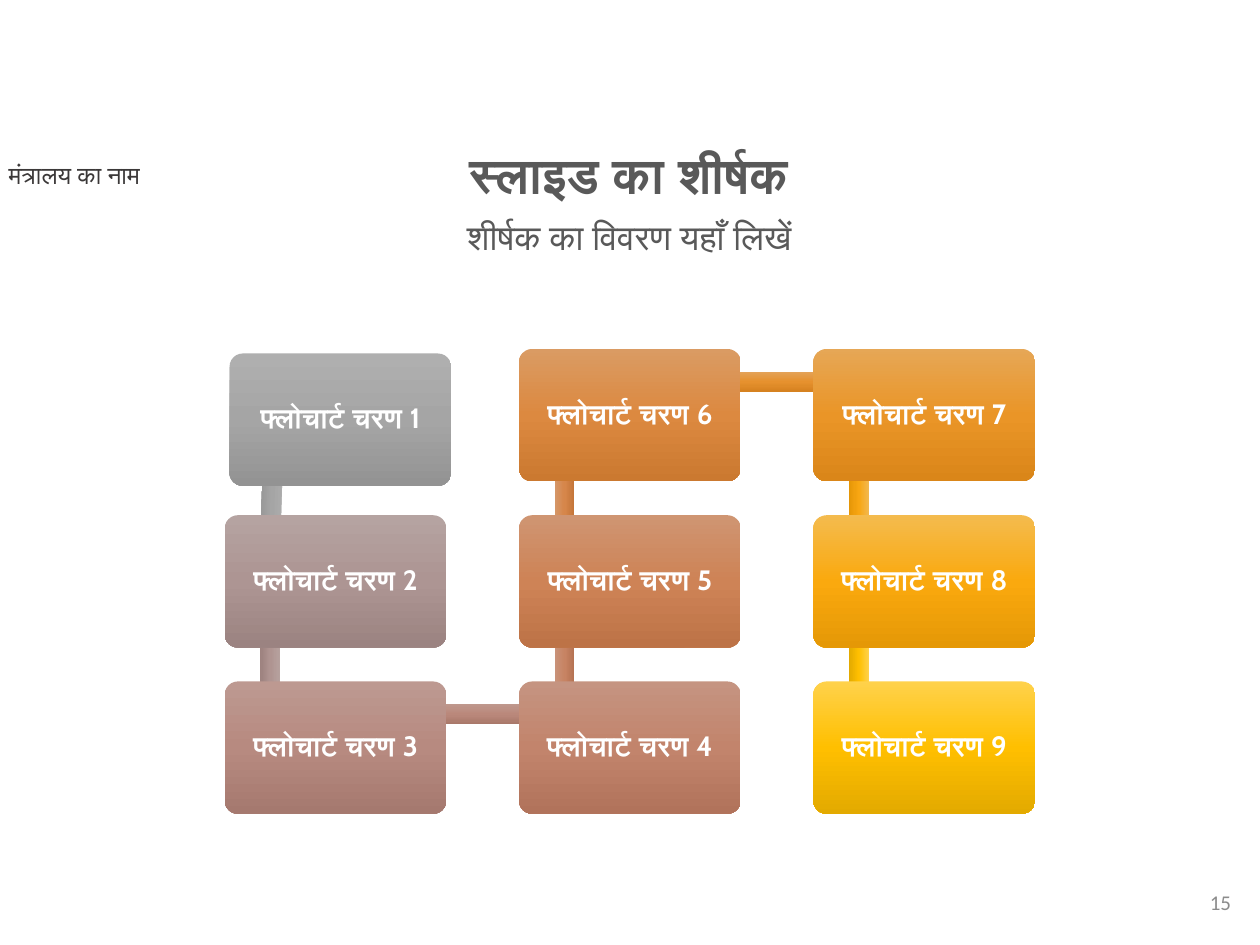
from copy import deepcopy
from math import atan2, degrees, hypot

from pptx import Presentation
from pptx.dml.color import RGBColor
from pptx.enum.shapes import MSO_SHAPE
from pptx.enum.text import MSO_ANCHOR, MSO_AUTO_SIZE, PP_ALIGN
from pptx.oxml.ns import qn
from pptx.util import Pt

COUNT, ROWS = 9, 3
BOX_W, BOX_H = 126.7, 75.6
STEP_X, STEP_Y = 168.2, 95
PIN_X, PIN_Y = 26, 18.7  # where a bar meets its box
BAR = 11.4
HUE = 45  # from grey to amber, in degrees

# Top, middle and bottom of each gradient, before the hue is turned
BOXES = [
    ("AFAFAF", "A5A5A5", "939393"), ("B5A1A1", "AD9393", "9B8181"),
    ("BD9191", "B78080", "A56F6F"), ("C58181", "C26C6C", "B15B5B"),
    ("CF7272", "CE5656", "BD4747"), ("DA6363", "DC4040", "CB3030"),
    ("E65656", "EA2727", "DA1919"), ("F44E4E", "FA0E0E", "E50606"),
    ("FF4B4B", "FF0000", "E30000"),
]
BARS = [
    ("AFAFAF", "A5A5A5", "939393"), ("B69E9E", "AF9191", "9D7F7F"),
    ("BF8D8D", "BA7B7B", "A96A6A"), ("C97B7B", "C76363", "B65353"),
    ("D56969", "D64A4A", "C53A3A"), ("E35A5A", "E62E2E", "D62020"),
    ("F24F4F", "F81212", "E50707"), ("FF4B4B", "FF0000", "E30000"),
]


def rgb(code):
    return RGBColor.from_string(code)


def turn(code, hue):
    """Turn a red of any strength towards yellow by hue degrees."""
    red, _, blue = rgb(code)
    green = round(blue + (red - blue) * hue / 60)
    return f"{red:02X}{green:02X}{blue:02X}"


def shade(shape, codes, hue):
    shape.shadow.inherit = False
    shape.line.fill.background()
    shape.fill.gradient()
    shape.fill.gradient_angle = 270
    stops = shape._element.spPr.find(".//" + qn("a:gsLst"))
    stops.append(deepcopy(stops[0]))
    for stop, code, spot in zip(shape.fill.gradient_stops, codes, (0, 0.5, 1)):
        stop.color.rgb = rgb(turn(code, hue))
        stop.position = spot


def write(frame, text, size, color, font="Calibri", bold=False,
          align=PP_ALIGN.LEFT, anchor=MSO_ANCHOR.TOP, lead=1.0):
    frame.word_wrap = True
    frame.auto_size = MSO_AUTO_SIZE.NONE
    frame.vertical_anchor = anchor
    para = frame.paragraphs[0]
    para.alignment = align
    para.line_spacing = lead
    para.space_before = Pt(0)
    run = para.add_run()
    run.text = text
    run.font.name = font
    run.font.size = Pt(size)
    run.font.bold = bold
    run.font.color.rgb = rgb(color)


def place(shape, left, top, width, height):
    shape.left, shape.top = Pt(left), Pt(top)
    shape.width, shape.height = Pt(width), Pt(height)


def heading(slide, left, top, width):
    title, sub = slide.placeholders
    place(title, left + 28.8, top, width - 57.6, 33.8)
    write(title.text_frame, "स्लाइड का शीर्षक", 28, "595959", bold=True,
          align=PP_ALIGN.CENTER, lead=0.9)
    place(sub, left, top + 39.6, width, 45.4)
    write(sub.text_frame, "शीर्षक का विवरण यहाँ लिखें", 20, "595959",
          align=PP_ALIGN.CENTER, lead=0.9)


def label(slide, left, top, width, height, text, size, color, **style):
    box = slide.shapes.add_textbox(Pt(left), Pt(top), Pt(width), Pt(height))
    write(box.text_frame, text, size, color, **style)


def bar(slide, start, end, codes, hue):
    """Lay a bar from the pin of one box to the pin of the next."""
    run, rise = end[0] - start[0], end[1] - start[1]
    size = hypot(run, rise)
    left = (start[0] + end[0] - size) / 2 + PIN_X
    top = (start[1] + end[1] - BAR) / 2 + PIN_Y
    shape = slide.shapes.add_shape(
        MSO_SHAPE.RECTANGLE, Pt(left), Pt(top), Pt(size), Pt(BAR))
    shape.rotation = degrees(atan2(rise, run)) % 360
    shade(shape, codes, hue)


def step(slide, left, top, text, codes, hue):
    shape = slide.shapes.add_shape(
        MSO_SHAPE.ROUNDED_RECTANGLE, Pt(left), Pt(top), Pt(BOX_W), Pt(BOX_H))
    shape.adjustments[0] = 0.1
    shade(shape, codes, hue)
    frame = shape.text_frame
    frame.margin_left = frame.margin_right = Pt(7)
    frame.margin_top = frame.margin_bottom = Pt(7)
    write(frame, text, 16, "FFFFFF", font="Cabin", bold=True,
          align=PP_ALIGN.CENTER, anchor=MSO_ANCHOR.MIDDLE, lead=0.9)


def flow(slide, left, top):
    """Chain the steps down, up and down again through three columns."""
    spots = []
    for num in range(COUNT):
        col, row = divmod(num, ROWS)
        if col % 2:
            row = ROWS - 1 - row
        spots.append((left + col * STEP_X, top + row * STEP_Y))
    spots[0] = (left + 2.8, top + 2.6)  # the first box sits slightly off the grid
    for num, spot in enumerate(spots):
        if num < len(BARS):
            bar(slide, spot, spots[num + 1], BARS[num],
                HUE * num / (len(BARS) - 1))
        step(slide, *spot, f"फ्लोचार्ट चरण {num + 1}", BOXES[num],
             HUE * num / (COUNT - 1))


def main():
    deck = Presentation()
    deck.slide_width, deck.slide_height = Pt(720), Pt(540)
    slide = deck.slides.add_slide(deck.slide_layouts[0])
    label(slide, -2.2, 87.8, 157, 24.5, "मंत्रालय का नाम", 14, "3B3838")
    flow(slide, 128.4, 199.4)
    label(slide, 548.6, 501.1, 162, 28.8, "15", 12, "8C8C8C",
          align=PP_ALIGN.RIGHT, anchor=MSO_ANCHOR.MIDDLE)
    heading(slide, 105.1, 82.8, 509)
    deck.save("out.pptx")


if __name__ == "__main__":
    main()
